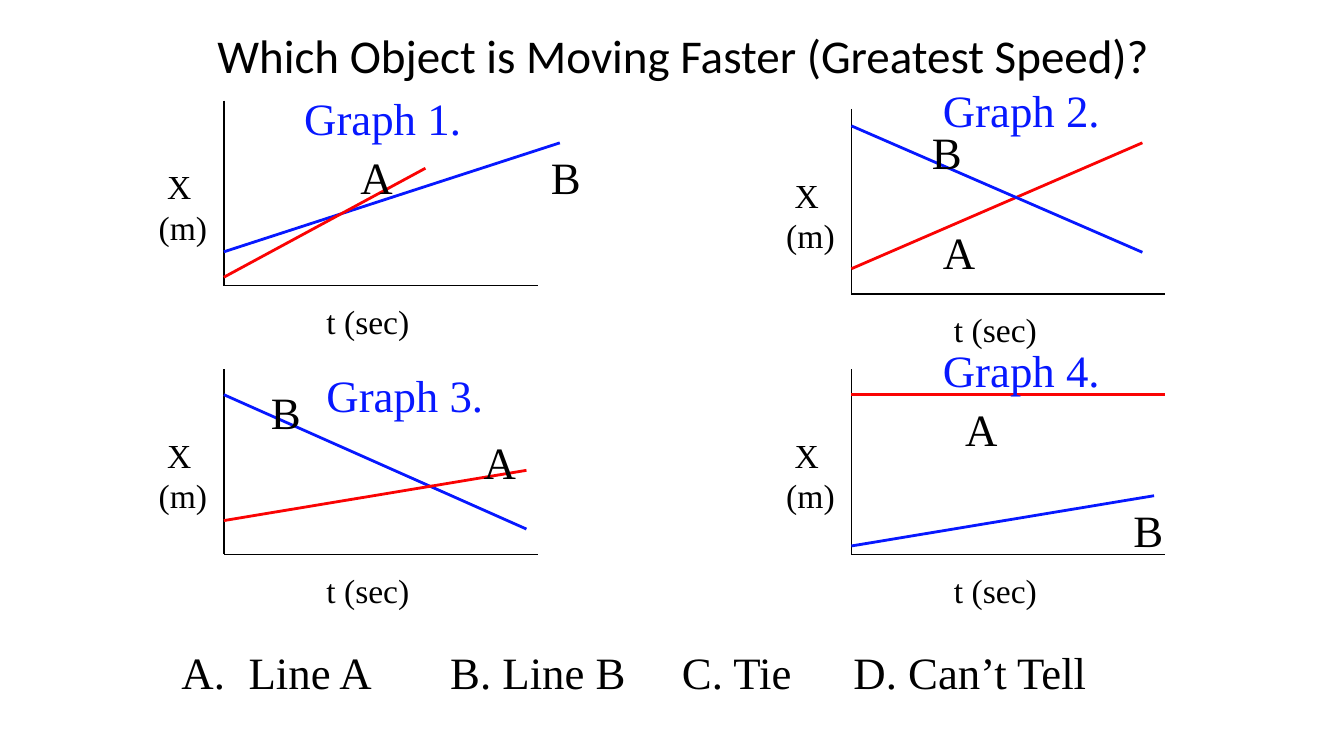
from lxml import etree
from pptx import Presentation
from pptx import util as u
from pptx.dml.color import RGBColor
from pptx.enum import shapes, text
from pptx.oxml.ns import qn

BLACK, BLUE, RED = "000000", "0718FF", "FA0303"
SERIF = "Times New Roman"
LINE_COLORS = {"A": RED, "B": BLUE}
AXIS_W, AXIS_H = 5.93, 3.5

TITLE = "Which Object is Moving Faster (Greatest Speed)?"
CHOICES = ["Line A", "B. Line B", "C. Tie", "D. Can’t Tell"]
CHOICE_TABS = [5.08, 9.46, 12.7]

# Centimetres, measured right of and up from each graph's origin
# lines: start height, end x, end height; labels: left, top
GRAPHS = [
    {"origin": (4.23, 5.4),
     "lines": {"B": (0.64, 6.35, 2.7), "A": (0.16, 3.81, 2.22)},
     "labels": {"Graph 1.": (1.27, 3.81), "A": (2.33, 2.7), "B": (5.93, 2.7)}},
    {"origin": (16.09, 5.56),
     "lines": {"A": (0.48, 5.5, 2.86), "B": (3.18, 5.5, 0.79)},
     "labels": {"Graph 2.": (1.48, 4.13), "A": (1.48, 1.43), "B": (1.27, 3.33)}},
    {"origin": (4.23, 10.48),
     "lines": {"B": (3.02, 5.72, 0.48), "A": (0.64, 5.72, 1.59)},
     "labels": {"Graph 3.": (1.69, 3.65), "A": (4.66, 2.38), "B": (0.64, 3.33)}},
    {"origin": (16.09, 10.48),
     "lines": {"A": (3.02, 5.93, 3.02), "B": (0.16, 5.72, 1.11)},
     "labels": {"Graph 4.": (1.48, 4.13), "A": (1.9, 3.02), "B": (5.08, 1.11)}},
]

prs = Presentation()
prs.slide_width, prs.slide_height = u.Cm(25.4), u.Cm(14.29)
s = prs.slides.add_slide(prs.slide_layouts[6])


def rgb(color):
    return RGBColor.from_string(color)


def add_line(x1, y1, x2, y2, color, width):
    ln = s.shapes.add_connector(shapes.MSO_CONNECTOR.STRAIGHT,
                                u.Cm(x1), u.Cm(y1), u.Cm(x2), u.Cm(y2))
    ln.line.color.rgb = rgb(color)
    ln.line.width = u.Pt(width)
    etree.SubElement(ln._element.spPr, qn("a:effectLst"))


def add_text(words, x, y, w, h, size, color=BLACK, font=SERIF, wrap=False):
    sp = s.shapes.add_textbox(u.Cm(x), u.Cm(y), u.Cm(w), u.Cm(h))
    tf = sp.text_frame
    tf.word_wrap = wrap
    tf.text = words
    for p in tf.paragraphs:
        for r in p.runs:
            r.font.size = u.Pt(size)
            r.font.name = font
            r.font.color.rgb = rgb(color)
    return tf


# Title
tf = add_text(TITLE, 2.12, 0.48, 21.59, 1.11, 25.2, font="Calibri", wrap=True)
tf.vertical_anchor = text.MSO_ANCHOR.MIDDLE
tf.paragraphs[0].alignment = text.PP_ALIGN.CENTER

# Graphs: axes, axis names, object lines, labels
for g in GRAPHS:
    x, y = g["origin"]
    add_line(x, y - AXIS_H, x, y, BLACK, 0.75)
    add_line(x, y, x + AXIS_W, y, BLACK, 0.75)
    add_text(" X\n(m)", x - 1.48, y - 2.38, 1.48, 1.8, 18, wrap=True)
    add_text("t (sec)", x + 1.69, y + 0.16, 2.12, 1.02, 18)
    for name, (start, dx, end) in g["lines"].items():
        add_line(x, y - start, x + dx, y - end, LINE_COLORS[name], 1.5)
    for words, (dx, up) in g["labels"].items():
        is_name = words in LINE_COLORS
        add_text(words, x + dx, y - up, 1.12 if is_name else 3.51, 1.27, 24,
                 BLACK if is_name else BLUE)

# Answer choices: lettered first item, the rest on tab stops
tf = add_text("\t".join(CHOICES), 3.18, 12.07, 17.78, 1.27, 24, wrap=True)
pPr = tf.paragraphs[0]._p.get_or_add_pPr()
pPr.set("marL", str(u.Cm(1.27)))
pPr.set("indent", str(u.Cm(-1.27)))
etree.SubElement(pPr, qn("a:buFont"), typeface=SERIF)
etree.SubElement(pPr, qn("a:buAutoNum"), type="alphaUcPeriod")
tabs = etree.SubElement(pPr, qn("a:tabLst"))
for pos in CHOICE_TABS:
    etree.SubElement(tabs, qn("a:tab"), pos=str(u.Cm(pos)), algn="l")

prs.save("out.pptx")
